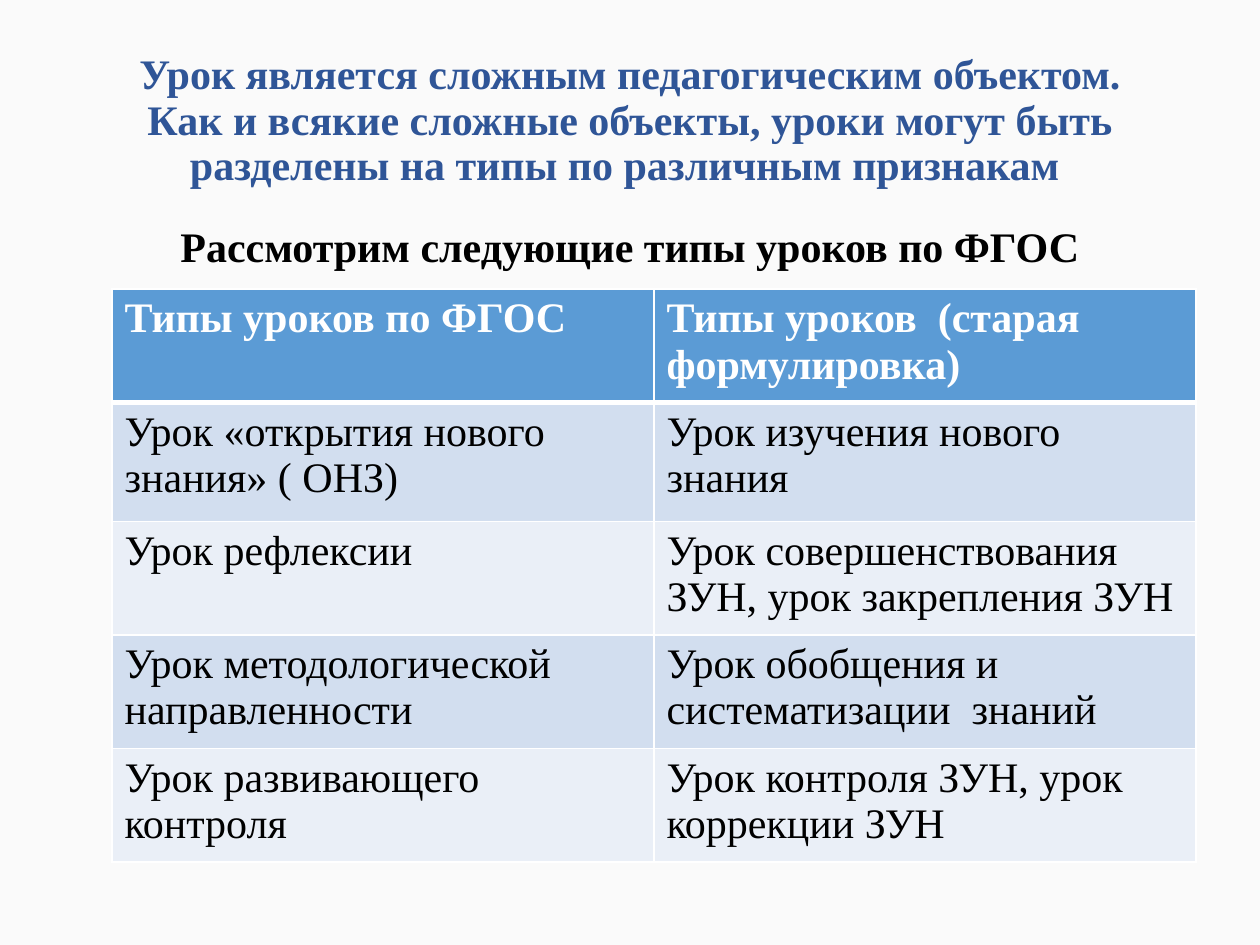
from dataclasses import dataclass

from lxml.etree import SubElement
from pptx import Presentation
from pptx.dml.color import RGBColor
from pptx.enum.text import MSO_ANCHOR, MSO_AUTO_SIZE, PP_ALIGN
from pptx.oxml.ns import qn
from pptx.util import Emu, Pt

PX = 914400 // 126
FONT = "Times New Roman"
WHITE, BLACK, NAVY, BLUE = "FFFFFF", "000000", "2F5597", "5B9BD5"
BANDS = ("D2DEEF", "EAEFF7")


@dataclass
class Box:
    x: int
    y: int
    w: int
    h: int

    def emu(self) -> list[Emu]:
        return [px(v) for v in (self.x, self.y, self.w, self.h)]


@dataclass
class Row:
    left: str
    right: str
    height: int = 104


TITLE = Box(87, 32, 1086, 179)
BODY = Box(87, 210, 1086, 620)
TABLE = Box(112, 289, 1084, 537)
ROWS = [
    Row("Типы уроков по ФГОС", "Типы уроков  (старая формулировка)"),
    Row("Урок «открытия нового знания» ( ОНЗ)", "Урок изучения нового знания", 119),
    Row("Урок рефлексии", "Урок совершенствования ЗУН, урок закрепления ЗУН"),
    Row("Урок методологической направленности", "Урок обобщения и систематизации  знаний"),
    Row("Урок развивающего контроля", "Урок контроля ЗУН, урок коррекции ЗУН"),
]


def px(n: int) -> Emu:
    return Emu(n * PX)


def color(code: str) -> RGBColor:
    return RGBColor.from_string(code)


def write(para, text: str, code: str, bold: bool) -> None:
    run = para.add_run()
    run.text = text
    font = run.font
    font.name, font.size, font.bold = FONT, Pt(24), bold
    font.color.rgb = color(code)


def border(cell, base: int, top: int) -> None:
    """Draw white cell borders, with base and top widths in points."""
    props = cell._tc.get_or_add_tcPr()
    for side, width in (("L", 1), ("R", 1), ("T", top), ("B", base)):
        line = SubElement(props, qn(f"a:ln{side}"), w=str(Pt(width)))
        fill = SubElement(line, qn("a:solidFill"))
        SubElement(fill, qn("a:srgbClr"), val=WHITE)


def add_title(slide) -> None:
    title = slide.shapes.title
    title.left, title.top, title.width, title.height = TITLE.emu()
    frame = title.text_frame
    frame.word_wrap = True
    frame.auto_size = MSO_AUTO_SIZE.NONE
    frame.vertical_anchor = MSO_ANCHOR.MIDDLE
    para = frame.paragraphs[0]
    para.alignment = PP_ALIGN.CENTER
    para.line_spacing = 0.9
    write(para, "Урок является сложным педагогическим объектом. Как и всякие сложные "
          "объекты, уроки могут быть разделены на типы по различным признакам ", NAVY, True)


def add_body(slide) -> None:
    frame = slide.shapes.add_textbox(*BODY.emu()).text_frame
    frame.word_wrap = True
    frame.margin_top = px(11)
    para = frame.paragraphs[0]
    para.alignment = PP_ALIGN.CENTER
    write(para, "Рассмотрим следующие типы уроков по ФГОС", BLACK, True)


def add_types(slide) -> None:
    table = slide.shapes.add_table(len(ROWS), 2, *TABLE.emu()).table
    for col in table.columns:
        col.width = px(TABLE.w // 2)
    for i, row in enumerate(ROWS):
        head = i == 0
        table.rows[i].height = px(row.height)
        for j, text in enumerate((row.left, row.right)):
            cell = table.cell(i, j)
            border(cell, base=3 if head else 1, top=3 if i == 1 else 1)
            cell.fill.solid()
            cell.fill.fore_color.rgb = color(BLUE if head else BANDS[(i - 1) % 2])
            write(cell.text_frame.paragraphs[0], text, WHITE if head else BLACK, head)


def main() -> None:
    deck = Presentation()
    deck.slide_width, deck.slide_height = px(1260), px(945)
    slide = deck.slides.add_slide(deck.slide_layouts.get_by_name("Title Only"))
    back = slide.background.fill
    back.solid()
    back.fore_color.rgb = color("FAFAFA")
    add_title(slide)
    add_body(slide)
    add_types(slide)
    deck.save("out.pptx")


if __name__ == "__main__":
    main()
